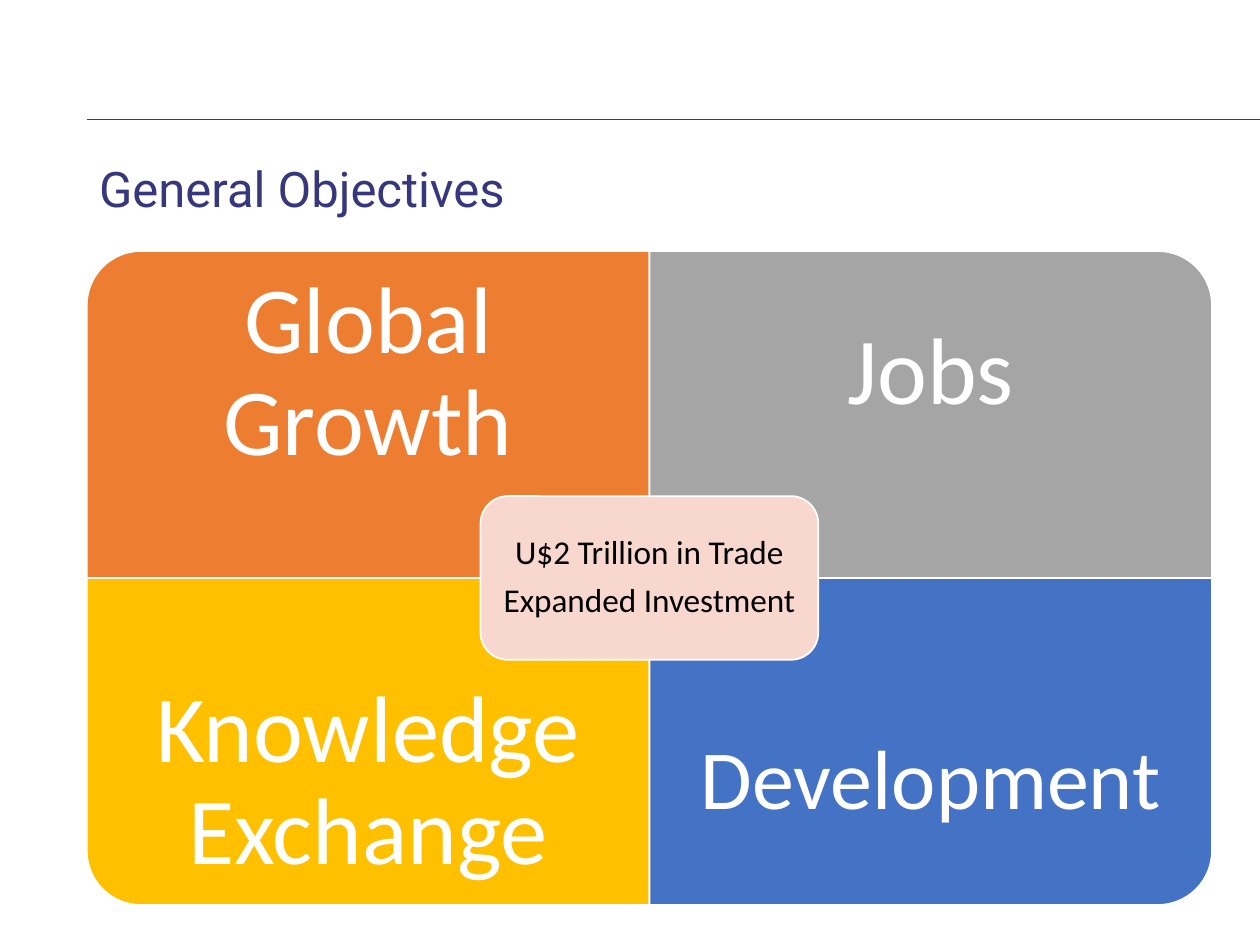
from math import cos, pi, sin

from lxml import etree
from pptx import Presentation
from pptx.dml.color import RGBColor
from pptx.enum.shapes import MSO_CONNECTOR, MSO_SHAPE
from pptx.enum.text import MSO_ANCHOR, PP_ALIGN
from pptx.oxml.ns import qn
from pptx.util import Pt

MIDDLE = MSO_ANCHOR.MIDDLE
LEFT, CENTER = PP_ALIGN.LEFT, PP_ALIGN.CENTER
STRAIGHT = MSO_CONNECTOR.STRAIGHT
ROUNDED = MSO_SHAPE.ROUNDED_RECTANGLE

COLORS = {
    "navy": "37377D",
    "orange": "ED7D31",
    "gray": "A5A5A5",
    "gold": "FFC000",
    "blue": "4472C4",
    "pink": "F8D7CE",
    "white": "FFFFFF",
    "black": "000000",
}
MID_X, MID_Y = 371.1, 330.3
WIDE, HIGH, ROUND = 321.5, 186.9, 31


class Deck:
    """Draws styled elements on the current slide."""

    def __init__(self):
        self.prs = Presentation()
        self.prs.slide_width, self.prs.slide_height = Pt(720), Pt(540)
        self.slide = self.prs.slides.add_slide(self.prs.slide_layouts[6])

    def color(self, name):
        return RGBColor.from_string(COLORS[name])

    def label(self, shape, lines, size, color, inset, font="Calibri", align=CENTER, after=0.35):
        frame = shape.text_frame
        frame.word_wrap = True
        frame.vertical_anchor = MIDDLE
        left, top, right, bottom = map(Pt, inset)
        frame.margin_left, frame.margin_top = left, top
        frame.margin_right, frame.margin_bottom = right, bottom
        frame.text = "\n".join(lines)
        for para in frame.paragraphs:
            para.alignment = align
            para.line_spacing = 0.9
            para.space_after = Pt(size * after)
            para.font.name, para.font.size = font, Pt(size)
            para.font.color.rgb = self.color(color)

    def paint(self, shape, fill):
        shape.shadow.inherit = False
        shape.fill.solid()
        shape.fill.fore_color.rgb = self.color(fill)
        shape.line.color.rgb = self.color("white")
        shape.line.width = Pt(1)

    def rule(self, left, right, y):
        line = self.slide.shapes.add_connector(STRAIGHT, Pt(left), Pt(y), Pt(right), Pt(y))
        line.line.color.rgb = self.color("navy")
        line.line.width = Pt(0.5)
        etree.SubElement(line._element.spPr, qn("a:effectLst"))

    def title(self, text, left, top, width, height):
        box = self.slide.shapes.add_textbox(Pt(left), Pt(top), Pt(width), Pt(height))
        self.label(box, [text], 28, "navy", (7.2, 3.6, 7.2, 3.6), "Roboto", LEFT, 0)

    def panel(self, text, side, level, fill, size, pad):
        steps = 16
        arc = [
            (WIDE - ROUND + ROUND * cos(i * pi / 2 / steps),
             HIGH - ROUND + ROUND * sin(i * pi / 2 / steps))
            for i in range(steps + 1)
        ]
        points = [
            (Pt(MID_X + side * x), Pt(MID_Y + level * y))
            for x, y in [(WIDE, 0), *arc, (0, HIGH)]
        ]
        form = self.slide.shapes.build_freeform(Pt(MID_X), Pt(MID_Y))
        form.add_line_segments(points, close=True)
        shape = form.convert_to_shape()
        self.paint(shape, fill)
        deep = pad + HIGH / 4
        top, bottom = (pad, deep) if level < 0 else (deep, pad)
        self.label(shape, [text], size, "white", (pad, top, pad, bottom))

    def center(self, lines, width, height, fill):
        shape = self.slide.shapes.add_shape(
            ROUNDED, Pt(MID_X - width / 2), Pt(MID_Y - height / 2), Pt(width), Pt(height)
        )
        self.paint(shape, fill)
        self.label(shape, lines, 19, "black", (5.6,) * 4)


def main():
    deck = Deck()
    deck.rule(49.6, 720, 68.4)
    deck.title("General Objectives", 49.6, 78.5, 620.6, 62.6)
    for panel in (
        ("Global Growth", -1, -1, "orange", 54, 30.2),
        ("Jobs", 1, -1, "gray", 54, 30.2),
        ("Knowledge Exchange", -1, 1, "gold", 54, 30.2),
        ("Development", 1, 1, "blue", 48, 26.6),
    ):
        deck.panel(*panel)
    deck.center(["U$2 Trillion in Trade", "Expanded Investment"], 193, 93.5, "pink")
    deck.prs.save("out.pptx")


if __name__ == "__main__":
    main()
